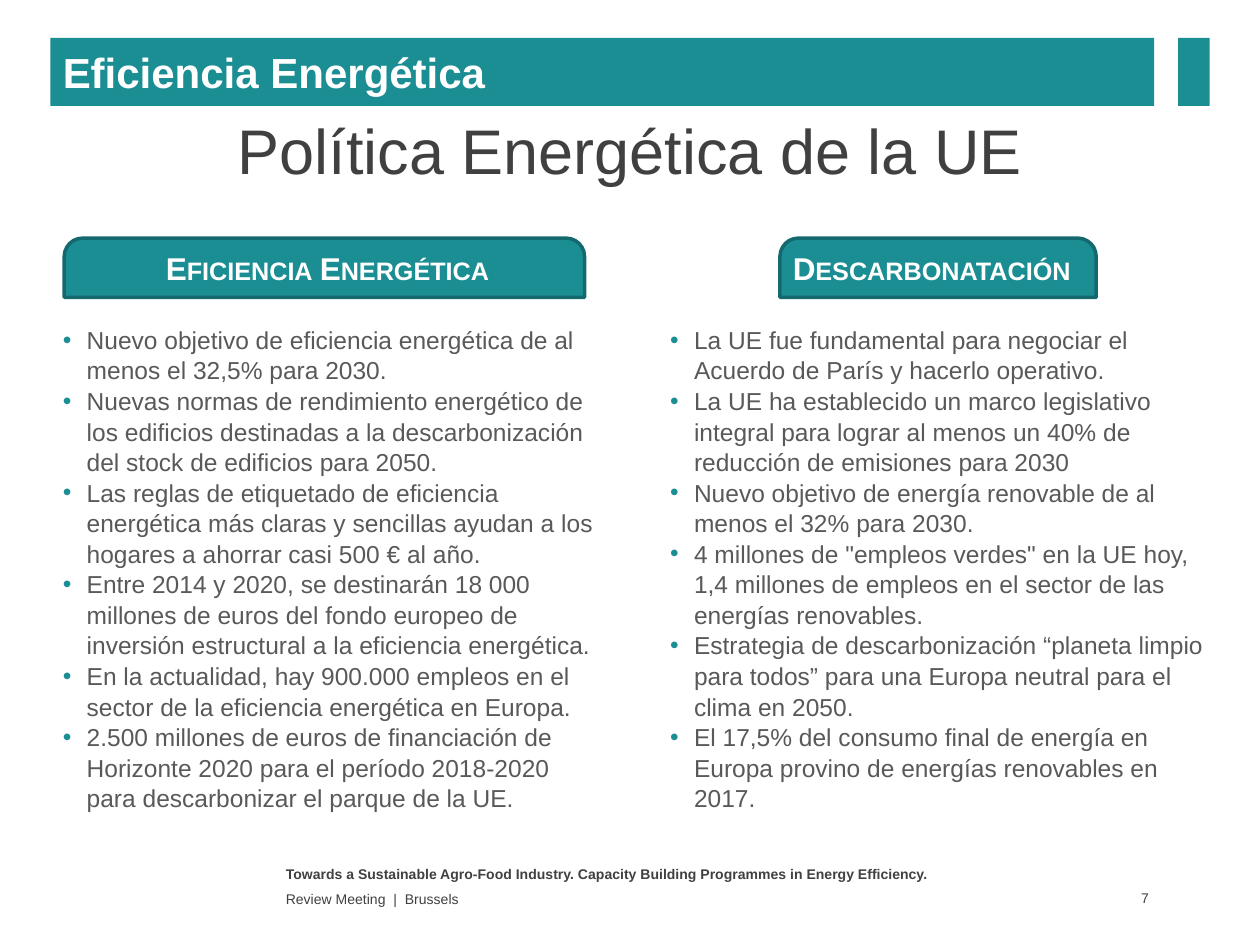
from collections import namedtuple
from dataclasses import dataclass

from lxml.etree import SubElement
from pptx import Presentation
from pptx.dml.color import RGBColor
from pptx.enum.shapes import MSO_SHAPE
from pptx.enum.text import MSO_ANCHOR, MSO_AUTO_SIZE, PP_ALIGN
from pptx.oxml.ns import qn
from pptx.util import Inches, Pt

CELL = Inches(0.1)  # grid of 100 columns by 75 rows
INDENT = Inches(0.19)


class Box(namedtuple("Box", "x y w h")):
    def inner(self, x, y, w, h):
        """Box placed from this box's top left corner."""
        return Box(self.x + x, self.y + y, w, h)

    def emu(self):
        return [round(n * CELL) for n in self]


@dataclass(frozen=True)
class Theme:
    face: str = "Arial"
    teal: str = "1B8E94"
    edge: str = "14696E"
    dark: str = "404040"
    body: str = "595959"
    white: str = "FFFFFF"
    title: int = 36
    head: int = 24
    label: int = 18
    text: int = 14
    small: int = 8


THEME = Theme()


def style(para, size, color, bold=False, align=PP_ALIGN.LEFT):
    para.alignment = align
    font = para.font
    font.name, font.size, font.bold = THEME.face, Pt(size), bold
    font.color.rgb = RGBColor.from_string(color)


def shape(slide, box, kind=MSO_SHAPE.RECTANGLE):
    item = slide.shapes.add_shape(kind, *box.emu())
    item.shadow.inherit = False
    item.fill.solid()
    item.fill.fore_color.rgb = RGBColor.from_string(THEME.teal)
    item.line.fill.background()
    return item


def frame(slide, box, anchor=MSO_ANCHOR.TOP, fit=MSO_AUTO_SIZE.NONE):
    area = slide.shapes.add_textbox(*box.emu()).text_frame
    area.word_wrap = True
    area.auto_size = fit
    area.vertical_anchor = anchor
    return area


def write(area, text, *look, **more):
    para = area.paragraphs[0]
    para.text = text
    style(para, *look, **more)
    return para


def header(slide, box, text):
    bar = shape(slide, box.inner(0, 0, 87.6, box.h))
    bar.text_frame.vertical_anchor = MSO_ANCHOR.MIDDLE
    write(bar.text_frame, text, THEME.head, THEME.white, bold=True)
    shape(slide, box.inner(box.w - 2.5, 0, 2.5, box.h))


def title(slide, box, text):
    area = frame(slide, box, MSO_ANCHOR.MIDDLE)
    write(area, text, THEME.title, THEME.dark, align=PP_ALIGN.CENTER)


def tab(slide, box, text, inset, width):
    """Round-topped tab, with its label inset from the left."""
    item = shape(slide, box, MSO_SHAPE.ROUND_2_SAME_RECTANGLE)
    item.adjustments[0] = 0.31
    item.line.color.rgb = RGBColor.from_string(THEME.edge)
    item.line.width = Pt(2)
    area = frame(slide, box.inner(inset, 0.4, width, 4),
                 fit=MSO_AUTO_SIZE.SHAPE_TO_FIT_TEXT)
    para = write(area, text, THEME.label, THEME.white, bold=True,
                 align=PP_ALIGN.CENTER)
    para._p.pPr.find(qn("a:defRPr")).set("cap", "small")


def bullet(para):
    para.line_spacing = 1.04
    props = para._p.get_or_add_pPr()
    props.set("marL", str(INDENT))
    props.set("indent", str(-INDENT))
    color = SubElement(props, qn("a:buClr"))
    SubElement(color, qn("a:srgbClr")).set("val", THEME.teal)
    SubElement(props, qn("a:buFont")).set("typeface", THEME.face)
    SubElement(props, qn("a:buChar")).set("char", "•")


def points(slide, box, lines):
    area = frame(slide, box, fit=MSO_AUTO_SIZE.SHAPE_TO_FIT_TEXT)
    for i, line in enumerate(lines):
        para = area.add_paragraph() if i else area.paragraphs[0]
        para.text = line
        bullet(para)
        style(para, THEME.text, THEME.body)


def column(slide, box, text, lines, left, width, inset, room):
    tab(slide, box.inner(left, 0, width, 4.7), text, inset, room)
    points(slide, box.inner(0, 6.3, box.w, box.h - 6.3), lines)


def footer(slide, box, event, place, number):
    write(frame(slide, box.inner(0, 0, 55, 2.1)), event,
          THEME.small, THEME.dark, bold=True)
    write(frame(slide, box.inner(0, 2.2, 55, 1.9), MSO_ANCHOR.MIDDLE), place,
          THEME.small, THEME.dark)
    page = frame(slide, box.inner(box.w - 5.6, 2.1, 5.6, 2), MSO_ANCHOR.MIDDLE)
    page.margin_right = Inches(0.04)
    write(page, number, THEME.small, THEME.dark, align=PP_ALIGN.RIGHT)


SAVING = [
    "Nuevo objetivo de eficiencia energética de al menos el 32,5% para 2030.",
    "Nuevas normas de rendimiento energético de los edificios destinadas a la "
    "descarbonización del stock de edificios para 2050.",
    "Las reglas de etiquetado de eficiencia energética más claras y sencillas "
    "ayudan a los hogares a ahorrar casi 500 € al año.",
    "Entre 2014 y 2020, se destinarán 18 000 millones de euros del fondo "
    "europeo de inversión estructural a la eficiencia energética.",
    "En la actualidad, hay 900.000 empleos en el sector de la eficiencia "
    "energética en Europa.",
    "2.500 millones de euros de financiación de Horizonte 2020 para el período "
    "2018-2020 para descarbonizar el parque de la UE.",
]
CARBON = [
    "La UE fue fundamental para negociar el Acuerdo de París y hacerlo operativo.",
    "La UE ha establecido un marco legislativo integral para lograr al menos un "
    "40% de reducción de emisiones para 2030",
    "Nuevo objetivo de energía renovable de al menos el 32% para 2030.",
    "4 millones de \"empleos verdes\" en la UE hoy, 1,4 millones de empleos en "
    "el sector de las energías renovables.",
    "Estrategia de descarbonización “planeta limpio para todos” para una Europa "
    "neutral para el clima en 2050.",
    "El 17,5% del consumo final de energía en Europa provino de energías "
    "renovables en 2017.",
]


def main():
    deck = Presentation()
    deck.slide_width, deck.slide_height = 100 * CELL, 75 * CELL
    slide = deck.slides.add_slide(deck.slide_layouts[6])
    footer(slide, Box(21.7, 68.2, 69.9, 4.1),
           "Towards a Sustainable Agro-Food Industry. "
           "Capacity Building Programmes in Energy Efficiency.",
           "Review Meeting  |  Brussels", "7")
    header(slide, Box(4, 3, 92, 5.4), "Eficiencia Energética")
    title(slide, Box(4, 10.3, 92, 3.1), "Política Energética de la UE")
    left = Box(4, 18.9, 44.4, 45)
    column(slide, left, "Eficiencia Energética", SAVING,
           left=1.1, width=41.3, inset=1.6, room=38.6)
    column(slide, left.inner(48.2, 0, left.w, left.h), "Descarbonatación", CARBON,
           left=9.7, width=25.1, inset=0, room=24.1)
    deck.save("out.pptx")


if __name__ == "__main__":
    main()
